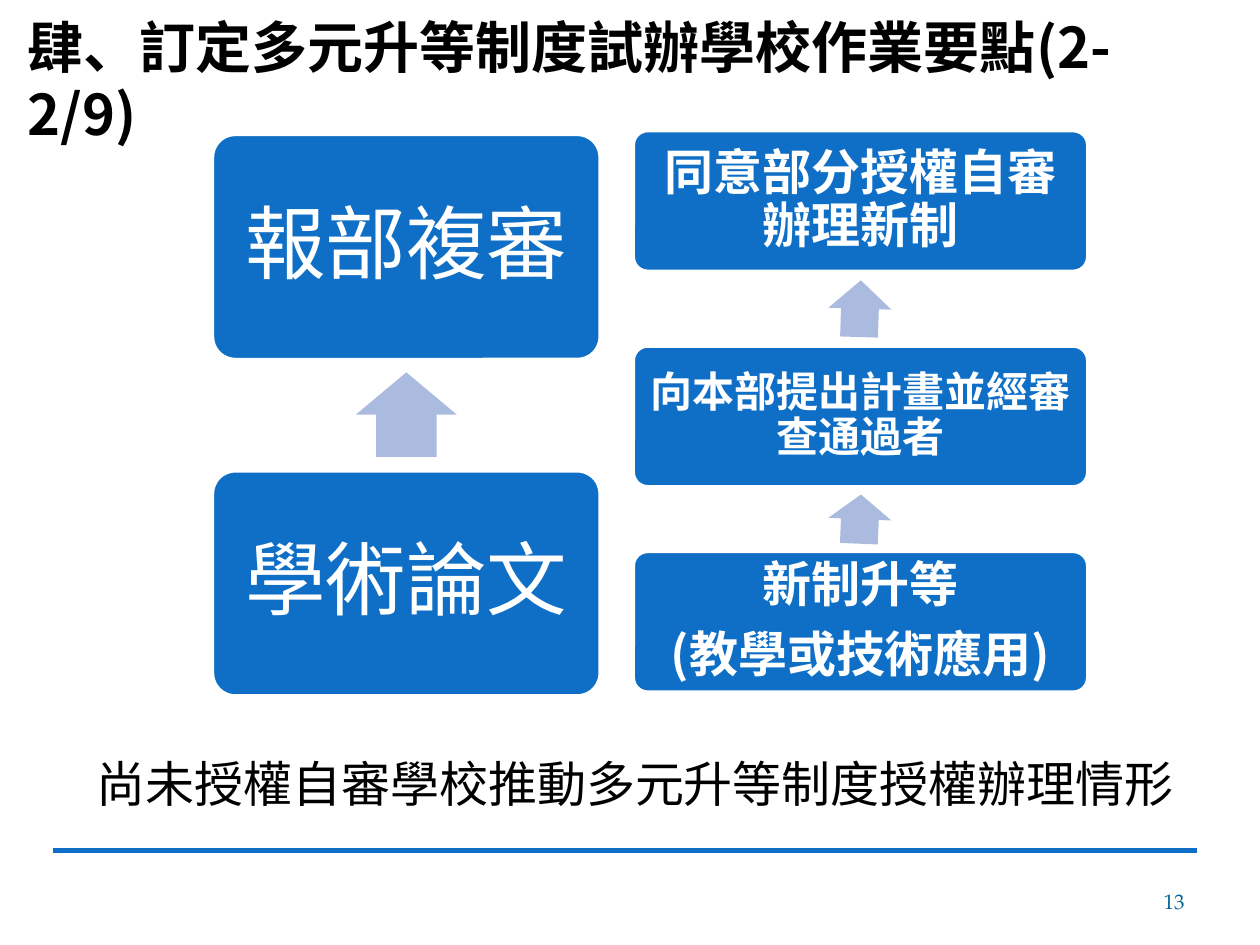
from lxml import etree
from pptx import Presentation
from pptx.dml.color import RGBColor
from pptx.enum.shapes import MSO_CONNECTOR, MSO_SHAPE
from pptx.enum.text import MSO_ANCHOR, PP_ALIGN
from pptx.oxml.ns import qn
from pptx.util import Inches, Pt

BLUE = RGBColor(0x0F, 0x6F, 0xC6)
PALE_BLUE = RGBColor(0xAB, 0xBB, 0xDF)
TEAL = RGBColor(0x00, 0x66, 0x99)
WHITE = RGBColor(0xFF, 0xFF, 0xFF)
BLACK = RGBColor(0x00, 0x00, 0x00)
CJK_FONT = "Noto Sans CJK SC"
NUMBER_FONT = "TeX Gyre Pagella"

TITLE = "肆、訂定多元升等制度試辦學校作業要點(2-2/9)"
CAPTION = "尚未授權自審學校推動多元升等制度授權辦理情形"
PAGE_NUMBER = "13"

# Each column is a flow read from top to bottom, with arrows pointing up.
# boxes: top, font size, inset, lines; arrows: left, top, length, rotation
COLUMNS = [
    {
        "left": 5.03, "width": 3.6, "height": 1.11, "bold": True,
        "boxes": [
            (1.04, 28, 0.12, ["同意部分授權自審辦理新制"]),
            (2.75, 24, 0.1, ["向本部提出計畫並經審查通過者"]),
            (4.38, 28, 0.12, ["新制升等", "(教學或技術應用)"]),
        ],
        "arrow_width": 0.5,
        "arrows": [(6.6, 2.2, 0.45, 271.8), (6.63, 3.87, 0.39, 272.4)],
    },
    {
        "left": 1.69, "width": 3.07, "height": 1.78, "bold": False,
        "boxes": [
            (1.07, 46, 0.19, ["報部複審"]),
            (3.74, 46, 0.19, ["學術論文"]),
        ],
        "arrow_width": 0.8,
        "arrows": [(2.89, 2.89, 0.67, 270)],
    },
]


def write_text(shape, lines, size, color=BLACK, font=CJK_FONT, bold=False,
               align=PP_ALIGN.LEFT, anchor=MSO_ANCHOR.TOP, inset=None,
               line_spacing=None, space_after=None):
    frame = shape.text_frame
    frame.word_wrap = True
    frame.vertical_anchor = anchor
    if inset is not None:
        frame.margin_left = frame.margin_right = Inches(inset)
        frame.margin_top = frame.margin_bottom = Inches(inset)
    for index, line in enumerate(lines):
        paragraph = frame.add_paragraph() if index else frame.paragraphs[0]
        paragraph.alignment = align
        paragraph.line_spacing = line_spacing
        paragraph.space_after = space_after
        run = paragraph.add_run()
        run.text = line
        run.font.size = Pt(size)
        run.font.bold = bold
        run.font.color.rgb = color
        run.font.name = font
        east_asian = etree.SubElement(run.font._element, qn("a:ea"))
        east_asian.set("typeface", font)


def add_text(slide, place, text, size, **style):
    box = slide.shapes.add_textbox(*map(Inches, place))
    write_text(box, [text], size, **style)


def add_filled_shape(slide, kind, place, color, adjustments):
    shape = slide.shapes.add_shape(kind, *map(Inches, place))
    shape.shadow.inherit = False
    shape.fill.solid()
    shape.fill.fore_color.rgb = color
    shape.line.fill.background()
    for index, value in enumerate(adjustments):
        shape.adjustments[index] = value
    return shape


def add_column(slide, column):
    for top, size, inset, lines in column["boxes"]:
        place = (column["left"], top, column["width"], column["height"])
        box = add_filled_shape(slide, MSO_SHAPE.ROUNDED_RECTANGLE, place, BLUE, [0.1])
        box.line.color.rgb = WHITE
        box.line.width = Pt(1.5)
        write_text(box, lines, size, color=WHITE, bold=column["bold"],
                   align=PP_ALIGN.CENTER, anchor=MSO_ANCHOR.MIDDLE, inset=inset,
                   line_spacing=0.9, space_after=Pt(0.35 * size))
    for left, top, length, rotation in column["arrows"]:
        place = (left, top, length, column["arrow_width"])
        arrow = add_filled_shape(slide, MSO_SHAPE.RIGHT_ARROW, place, PALE_BLUE, [0.6, 0.5])
        arrow.rotation = rotation


def add_rule(slide, left, right, y):
    rule = slide.shapes.add_connector(
        MSO_CONNECTOR.STRAIGHT, Inches(left), Inches(y), Inches(right), Inches(y))
    rule.line.color.rgb = BLUE
    rule.line.width = Pt(3)
    etree.SubElement(rule._element.spPr, qn("a:effectLst"))


def main():
    presentation = Presentation()
    presentation.slide_width = Inches(10)
    presentation.slide_height = Inches(7.5)
    slide = presentation.slides.add_slide(presentation.slide_layouts[6])

    add_rule(slide, 0.42, 9.5, 6.75)
    for column in COLUMNS:
        add_column(slide, column)
    add_text(slide, (0.67, 5.93, 8.82, 0.57), CAPTION, 28)
    add_text(slide, (0.12, 0.05, 9.61, 0.64), TITLE, 32, bold=True)
    add_text(slide, (7.17, 6.95, 2.33, 0.4), PAGE_NUMBER, 12, color=TEAL,
             font=NUMBER_FONT, align=PP_ALIGN.RIGHT, anchor=MSO_ANCHOR.MIDDLE)

    presentation.save("out.pptx")


if __name__ == "__main__":
    main()
